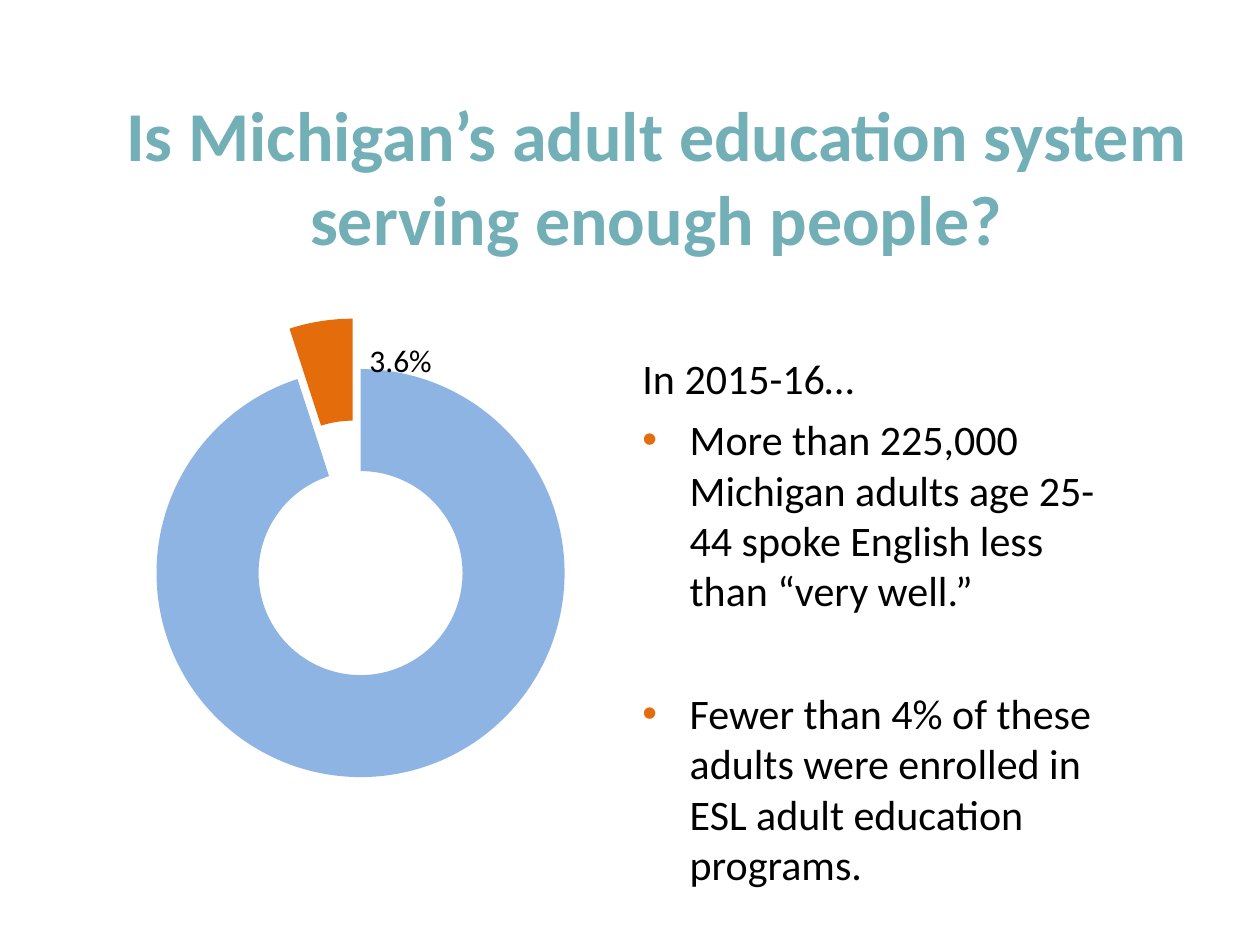
from lxml import etree
from pptx import Presentation
from pptx.chart.data import CategoryChartData
from pptx.dml.color import RGBColor as RGB
from pptx.enum.chart import XL_CHART_TYPE as CT
from pptx.enum.text import PP_ALIGN as AL
from pptx.oxml import parse_xml
from pptx.oxml.ns import nsdecls, qn
from pptx.util import Pt

COLORS = {"title": "73AFB6", "text": "000000", "rest": "8EB4E3", "accent": "E46C0A"}
FONT = "Calibri"

prs = Presentation()
prs.slide_width, prs.slide_height = Pt(720), Pt(540)
s = prs.slides.add_slide(prs.slide_layouts[6])


def add_text(box, lines, size, color="text", bold=False, align=AL.LEFT, after=()):
    """Add a text box with one paragraph per line."""
    tf = s.shapes.add_textbox(*[Pt(v) for v in box]).text_frame
    tf.word_wrap = True
    for i, line in enumerate(lines):
        p = tf.paragraphs[0] if i == 0 else tf.add_paragraph()
        p.alignment = align
        p.space_after = Pt(after[i] if after else 0)
        r = p.add_run()
        r.text = line
        r.font.name, r.font.size, r.font.bold = FONT, Pt(size), bold
        r.font.color.rgb = RGB.from_string(COLORS[color])
    return tf


# Facts: a lead-in line and two bulleted points
facts = add_text((360, 198, 283.5, 250.5), [
    "In 2015-16…",
    "More than 225,000 Michigan adults age 25-44 spoke English less than “very well.”",
    "Fewer than 4% of these adults were enrolled in ESL adult education programs.",
], 24, after=(6, 41.3, 6))
for p in facts.paragraphs[1:]:
    pPr = p._p.get_or_add_pPr()
    pPr.set("marL", str(Pt(27)))
    pPr.set("indent", str(-Pt(27)))
    color = etree.SubElement(pPr, qn("a:buClr"))
    etree.SubElement(color, qn("a:srgbClr"), val=COLORS["accent"])
    etree.SubElement(pPr, qn("a:buFont"), typeface="Arial")
    etree.SubElement(pPr, qn("a:buChar"), char="•")

# Title
add_text((60, 49, 630, 104.5),
         ["Is Michigan’s adult education system serving enough people?"],
         40, color="title", bold=True, align=AL.CENTER)

# Doughnut chart with exploded slices
data = CategoryChartData()
data.categories = ["1", "2"]
data.add_series("Series 1", (95, 5))
chart = s.shapes.add_chart(CT.DOUGHNUT_EXPLODED, Pt(24), Pt(162), Pt(450), Pt(294),
                           data).chart
chart.has_title = chart.has_legend = False
chart.font.name, chart.font.size = FONT, Pt(10)
chart.font.color.rgb = RGB.from_string(COLORS["text"])
plot = chart.plots[0]
plot.vary_by_categories = True
series = plot.series[0]
for i, name in enumerate(("rest", "accent")):
    fmt = series.points[i].format
    fmt.fill.solid()
    fmt.fill.fore_color.rgb = RGB.from_string(COLORS[name])
    fmt.line.fill.background()

ser = series._element
for old in ser.findall(".//" + qn("c:explosion")):
    old.getparent().remove(old)
ser.find(qn("c:dPt")).addprevious(
    parse_xml(f'<c:explosion {nsdecls("c")} val="25"/>'))

# Fixed plot position inside the chart
area = chart._chartSpace.chart.plotArea
for old in area.findall(qn("c:layout")):
    area.remove(old)
layout = etree.Element(qn("c:layout"))
manual = etree.SubElement(layout, qn("c:manualLayout"))
for tag, val in (("layoutTarget", "inner"), ("xMode", "edge"), ("yMode", "edge"),
                 ("x", "0.108"), ("y", "0.044"), ("w", "0.583"), ("h", "0.972")):
    etree.SubElement(manual, qn("c:" + tag), val=val)
area.insert(0, layout)

# Label of the small slice
add_text((204, 191.5, 66, 29), ["3.6%"], 18)

prs.save("out.pptx")
